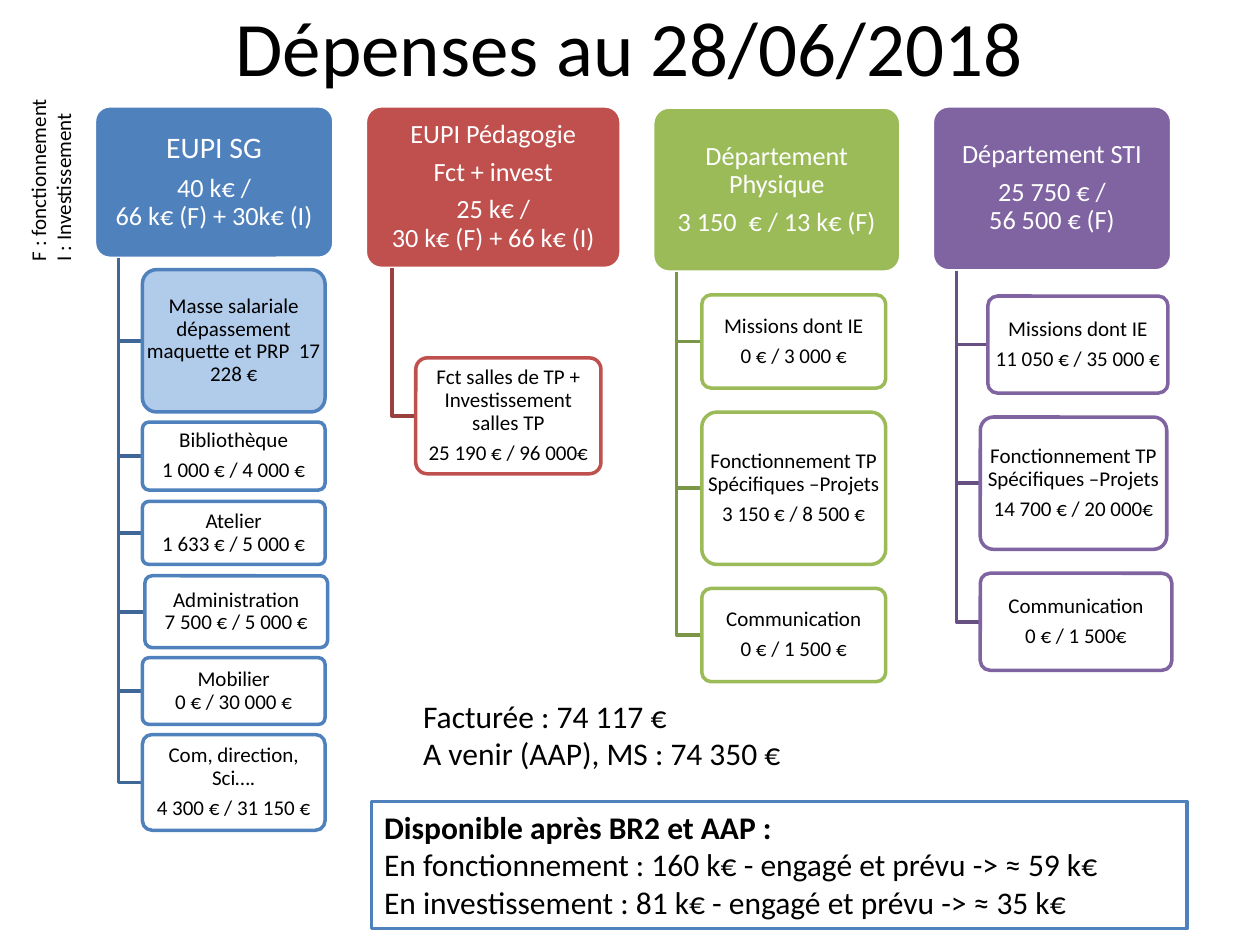
from lxml.etree import SubElement
from pptx import Presentation
from pptx.dml.color import RGBColor
from pptx.enum.shapes import MSO_SHAPE
from pptx.enum.text import MSO_ANCHOR, PP_ALIGN
from pptx.oxml.ns import qn
from pptx.util import Inches, Pt

COLORS = {
    "black": "000000", "white": "FFFFFF", "salary": "558ED5",
    "blue": "4F81BD", "blue_line": "3F6797",
    "red": "C0504D", "red_line": "9A403E",
    "green": "9BBB59", "green_line": "7C9647",
    "purple": "8064A2", "purple_line": "675082",
}
RGB = {name: RGBColor.from_string(value) for name, value in COLORS.items()}

deck = Presentation()
deck.slide_width, deck.slide_height = Inches(10), Inches(7.5)
CELL = deck.slide_width // 100  # grid of 100 columns by 75 rows
CORNER = 0.1


def write(frame, paragraphs, size, color="black", spacing=None, after=0, align=PP_ALIGN.LEFT):
    frame.word_wrap = True
    for i, words in enumerate(paragraphs):
        line = frame.paragraphs[0] if i == 0 else frame.add_paragraph()
        line.text = words
        line.alignment = align
        line.line_spacing = spacing
        line.space_after = Pt(after)
        line.font.name, line.font.size = "Calibri", Pt(size)
        line.font.color.rgb = RGB[color]


def add_card(box, paragraphs, size, fill, outline, color, opacity=100):
    card = slide.shapes.add_shape(MSO_SHAPE.ROUNDED_RECTANGLE, *(int(n * CELL) for n in box))
    card.shadow.inherit = False
    card.adjustments[0] = CORNER
    card.fill.solid()
    card.fill.fore_color.rgb = RGB[fill]
    if opacity < 100:
        tint = card.fill._xPr.find(qn("a:solidFill"))[0]
        SubElement(tint, qn("a:alpha"), val=str(opacity * 1000))
    card.line.color.rgb, card.line.width = RGB[outline], Pt(2)
    # The rounded corners already inset the text by 29 % of their radius
    frame = card.text_frame
    side = int((0.3 - 0.29 * CORNER * min(box[2:])) * CELL)
    frame.margin_left = frame.margin_right = side
    frame.margin_top = frame.margin_bottom = 0
    frame.vertical_anchor = MSO_ANCHOR.MIDDLE
    write(frame, paragraphs, size, color, 0.9, 0.35 * size, PP_ALIGN.CENTER)
    return card


# Title
slide = deck.slides.add_slide(deck.slide_layouts[5])
title = slide.shapes.title
title.left, title.top, title.width, title.height = (int(n * CELL) for n in (17.7, 2.1, 80, 4))
title.text_frame.vertical_anchor = MSO_ANCHOR.MIDDLE
write(title.text_frame, ["Dépenses au 28/06/2018"], 44, spacing=0.9)

# Budgets: colour, trunk column, head box, head text, then (box, text) of each item
budgets = [
    ("blue", 9.4, (7.5, 8.4, 19, 12.1), ["EUPI SG", "40 k€ /\n66 k€ (F) + 30k€ (I)"], [
        ((11.3, 21.4, 14.5, 11.3), ["Masse salariale dépassement maquette et PRP  17 228 €"]),
        ((11.3, 33.5, 14.5, 5.4), ["Bibliothèque", "1 000 € / 4 000 €"]),
        ((11.3, 39.8, 14.5, 5), ["Atelier\n1 633 € / 5 000 €"]),
        ((11.5, 45.7, 14.5, 5.7), ["Administration\n7 500 € / 5 000 €"]),
        ((11.3, 52.2, 14.5, 5.3), ["Mobilier\n0 € / 30 000 €"]),
        ((11.3, 58.3, 14.5, 7.6), ["Com, direction, Sci….", "4 300 € / 31 150 €"]),
    ]),
    ("red", 31.1, (29, 8.4, 20.3, 12.9),
     ["EUPI Pédagogie", "Fct + invest", "25 k€ /\n30 k€ (F) + 66 k€ (I)"], [
        ((33, 28.4, 14.7, 9.2),
         ["Fct salles de TP + Investissement salles TP", "25 190 € / 96 000€"]),
    ]),
    ("green", 53.7, (51.8, 8.5, 19.7, 13.1), ["Département Physique", "3 150  € / 13 k€ (F)"], [
        ((55.7, 23.4, 14.6, 7.4), ["Missions dont IE", "0 € / 3 000 €"]),
        ((55.7, 32.7, 14.6, 12.1),
         ["Fonctionnement TP Spécifiques –Projets", "3 150 € / 8 500 €"]),
        ((55.7, 46.7, 14.6, 7.4), ["Communication", "0 € / 1 500 €"]),
    ]),
    ("purple", 75.9, (74, 8.4, 19, 13.1), ["Département STI", "25 750 € /\n56 500 € (F)"], [
        ((78.4, 23.5, 14.3, 7.7), ["Missions dont IE", "11 050 € / 35 000 €"]),
        ((77.8, 33.1, 14.8, 10.5),
         ["Fonctionnement TP Spécifiques –Projets", "14 700 € / 20 000€"]),
        ((77.8, 45.5, 15.2, 7.7), ["Communication", "0 € / 1 500€"]),
    ]),
]
for color, trunk, head_box, head_text, items in budgets:
    head = add_card(head_box, head_text, 15, color, "white", "white")
    if color == "blue":
        head.text_frame.paragraphs[0].font.size = Pt(17)
    base = head_box[1] + head_box[3]
    for (left, top, width, height), words in items:
        # Elbow from the head down to the item
        middle = top + height / 2
        pen = slide.shapes.build_freeform(int(trunk * CELL), int(base * CELL))
        pen.add_line_segments(
            [(int(x * CELL), int(middle * CELL)) for x in (trunk, left)], close=False)
        elbow = pen.convert_to_shape()
        elbow.shadow.inherit = False
        elbow.fill.background()
        elbow.line.color.rgb, elbow.line.width = RGB[color + "_line"], Pt(2)
        is_salary = words[0].startswith("Masse")
        add_card((left, top, width, height), words, 12, "salary" if is_salary else "white",
                 color, "black", 46 if is_salary else 90)

# Totals, available amounts and legend
notes = [
    ((32.6, 54.8, 45.5, 7.1), 18, ["Facturée : 74 117 €", "A venir (AAP), MS : 74 350 €"]),
    ((29.5, 63.6, 64.7, 10.1), 18, [
        "Disponible après BR2 et AAP :",
        "En fonctionnement : 160 k€ - engagé et prévu -> ≈ 59 k€",
        "En investissement : 81 k€ - engagé et prévu -> ≈ 35 k€"]),
    ((-3.5, 11.7, 15, 5), 12, ["F : fonctionnement", "I : Investissement"]),
]
boxes = []
for box, size, words in notes:
    note = slide.shapes.add_textbox(*(int(n * CELL) for n in box))
    write(note.text_frame, words, size)
    boxes.append(note)
totals, available, legend = boxes
available.line.color.rgb, available.line.width = RGB["blue"], Pt(2)
available.text_frame.paragraphs[0].font.bold = True
legend.rotation = 270

deck.save("out.pptx")
